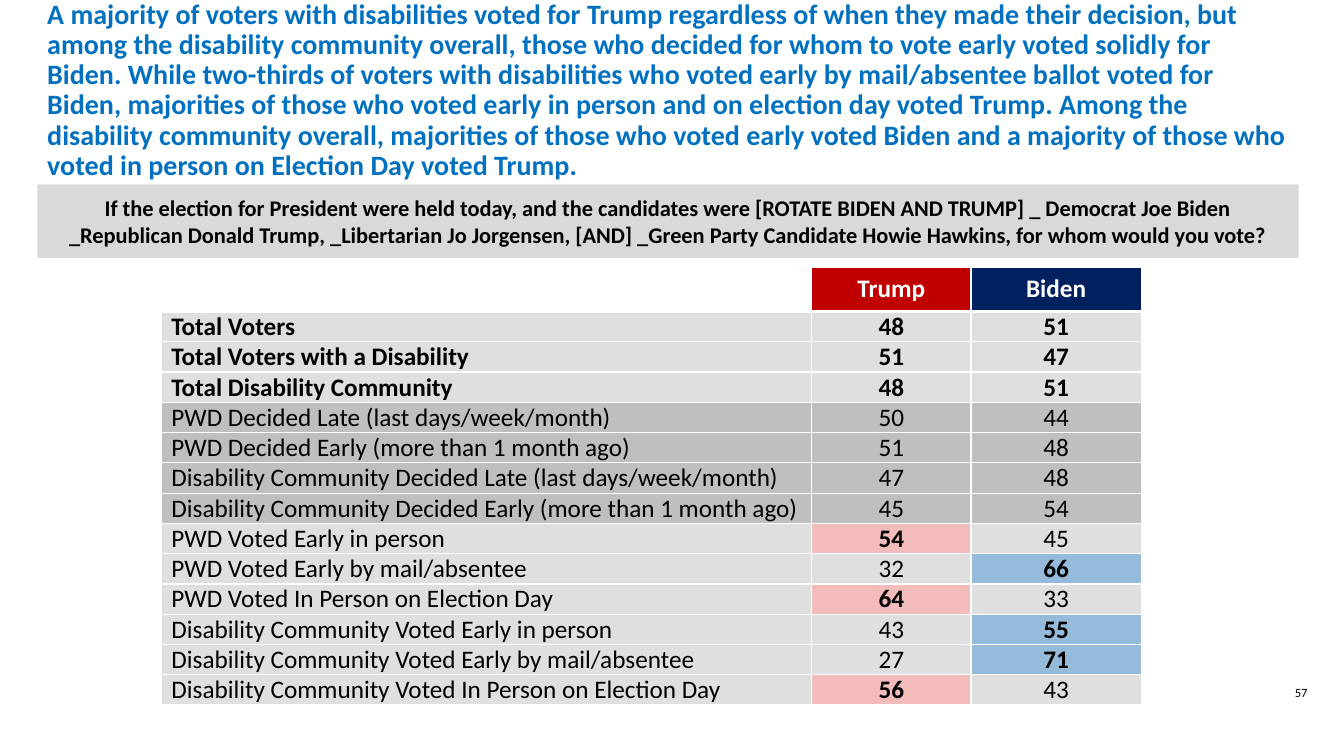
from lxml import etree
from pptx import Presentation
from pptx.dml.color import RGBColor
from pptx.enum.shapes import MSO_SHAPE
from pptx.enum.text import MSO_ANCHOR, PP_ALIGN
from pptx.oxml.ns import qn
from pptx.util import Inches, Pt

LEFT, MID = PP_ALIGN.LEFT, PP_ALIGN.CENTER
TOP, CENTER = MSO_ANCHOR.TOP, MSO_ANCHOR.MIDDLE
RECT = MSO_SHAPE.RECTANGLE
LIGHT, DARK, RED, BLUE = "DFDFDF", "BFBFBF", "F2BCBB", "96BADA"


def paint(fill, color):
    fill.solid()
    fill.fore_color.rgb = RGBColor.from_string(color)


def write(frame, text, size=18, color="000000", bold=False, align=LEFT,
          anchor=CENTER, space=1.0):
    frame.word_wrap = True
    frame.vertical_anchor = anchor
    para = frame.paragraphs[0]
    para.alignment = align
    para.line_spacing = space
    run = para.add_run()
    run.text = text
    font = run.font
    font.name, font.size, font.bold = "Calibri", Pt(size), bold
    font.color.rgb = RGBColor.from_string(color)


deck = Presentation()
deck.slide_width, deck.slide_height = Inches(13.33), Inches(7.5)
slide = deck.slides.add_slide(deck.slide_layouts[6])
shapes = slide.shapes

# Page number
page = shapes.add_textbox(Inches(12.53), Inches(6.75), Inches(0.75), Inches(0.33))
write(page.text_frame, "57", size=9, align=MID, anchor=TOP)

# Title
title = shapes.add_textbox(Inches(0.37), Inches(0.35), Inches(12.51), Inches(1.1))
write(title.text_frame,
      "A majority of voters with disabilities voted for Trump regardless of when "
      "they made their decision, but among the disability community overall, those "
      "who decided for whom to vote early voted solidly for Biden. While two-thirds "
      "of voters with disabilities who voted early by mail/absentee ballot voted for "
      "Biden, majorities of those who voted early in person and on election day voted "
      "Trump. Among the disability community overall, majorities of those who voted "
      "early voted Biden and a majority of those who voted in person on Election Day "
      "voted Trump.",
      size=20, color="0070C0", bold=True, space=0.9)

# Survey question
band = shapes.add_shape(RECT, Inches(0.37), Inches(1.83), Inches(12.51), Inches(0.73))
band.shadow.inherit = False
paint(band.fill, "D9D9D9")
band.line.fill.background()
write(band.text_frame,
      "If the election for President were held today, and the candidates were "
      "[ROTATE BIDEN AND TRUMP] _ Democrat Joe Biden _Republican Donald Trump, "
      "_Libertarian Jo Jorgensen, [AND] _Green Party Candidate Howie Hawkins, for "
      "whom would you vote?",
      size=16, bold=True, align=MID)

# Results: label, Trump, Biden
votes = [
    ("Total Voters", 48, 51),
    ("Total Voters with a Disability", 51, 47),
    ("Total Disability Community", 48, 51),
    ("PWD Decided Late (last days/week/month)", 50, 44),
    ("PWD Decided Early (more than 1 month ago)", 51, 48),
    ("Disability Community Decided Late (last days/week/month)", 47, 48),
    ("Disability Community Decided Early (more than 1 month ago)", 45, 54),
    ("PWD Voted Early in person", 54, 45),
    ("PWD Voted Early by mail/absentee", 32, 66),
    ("PWD Voted In Person on Election Day", 64, 33),
    ("Disability Community Voted Early in person", 43, 55),
    ("Disability Community Voted Early by mail/absentee", 27, 71),
    ("Disability Community Voted In Person on Election Day", 56, 43),
]
rows = [("", "Trump", "Biden")] + votes
table = shapes.add_table(len(rows), 3, Inches(1.6), Inches(2.65),
                         Inches(9.72), Inches(4.34)).table
table.first_row = table.horz_banding = False
for col, width in zip(table.columns, (6.45, 1.58, 1.69)):
    col.width = Inches(width)

for r, row in enumerate(rows):
    head = r == 0
    table.rows[r].height = Inches(0.44 if head else 0.3)
    for c, value in enumerate(row):
        cell = table.cell(r, c)
        # The leader of each voting-method row stands out
        lead = r > 7 and c > 0 and value == max(row[1:])
        if head:
            fill = ("FFFFFF", "C00000", "002060")[c]
        elif lead:
            fill = (RED, BLUE)[c - 1]
        else:
            fill = DARK if 4 <= r <= 7 else LIGHT
        paint(cell.fill, fill)
        if not head:
            cell.margin_top = cell.margin_bottom = 0
        cell.vertical_anchor = CENTER
        write(cell.text_frame, str(value), color="FFFFFF" if head else "000000",
              bold=r <= 3 or lead, align=MID if c else LEFT)
        # White borders, thicker under the header
        props = cell._tc.get_or_add_tcPr()
        for i, side in enumerate(("lnL", "lnR", "lnT", "lnB")):
            thick = (head and side == "lnB") or (r == 1 and side == "lnT")
            edge = etree.Element(qn("a:" + side), w=str(Pt(3 if thick else 1)))
            solid = etree.SubElement(edge, qn("a:solidFill"))
            etree.SubElement(solid, qn("a:srgbClr"), val="FFFFFF")
            props.insert(i, edge)

deck.save("out.pptx")
